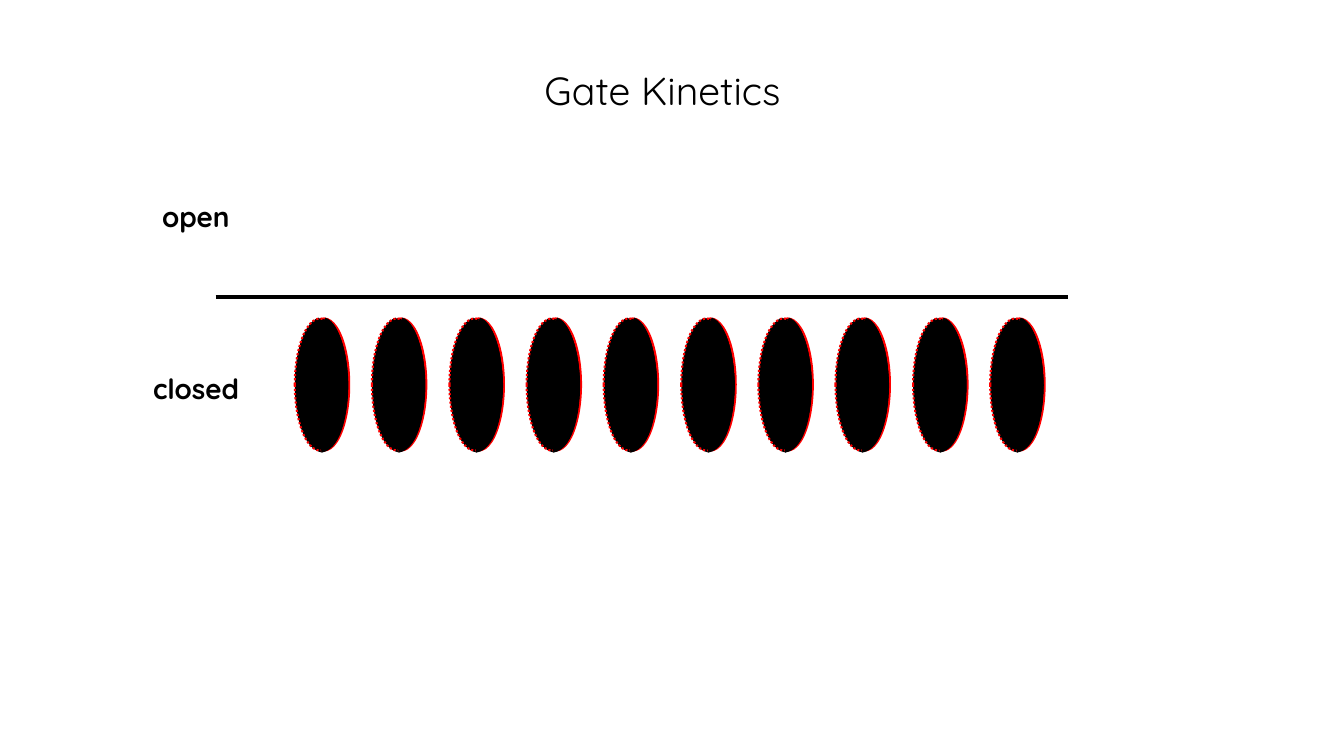
import pptx
import pptx.util
import pptx.dml.color
import pptx.enum.dml
import pptx.enum.shapes
import pptx.enum.text
import pptx.oxml.ns
import lxml.etree

PX = 4572
COLORS = {"ink": "000000", "rim": "FF0000", "paper": "FFFFFF"}
GATE_COUNT = 10
GATE_SPAN = 1380
THRESHOLD_Y = 589

presentation = pptx.Presentation()
presentation.slide_width = 2667 * PX
presentation.slide_height = 1500 * PX
slide = presentation.slides.add_slide(presentation.slide_layouts[5])


def rgb(name):
    return pptx.dml.color.RGBColor.from_string(COLORS[name])


def write_text(text, left, top, width, height, size=20, bold=True, holder=None):
    if holder is None:
        holder = slide.shapes.add_textbox(0, 0, 0, 0)
    holder.left, holder.top = left * PX, top * PX
    holder.width, holder.height = width * PX, height * PX
    frame = holder.text_frame
    frame.text = text
    frame.word_wrap = False
    frame.auto_size = pptx.enum.text.MSO_AUTO_SIZE.SHAPE_TO_FIT_TEXT
    frame.vertical_anchor = pptx.enum.text.MSO_ANCHOR.TOP
    paragraph = frame.paragraphs[0]
    paragraph.alignment = pptx.enum.text.PP_ALIGN.LEFT
    paragraph.line_spacing = pptx.util.Pt(28)
    paragraph.space_before = pptx.util.Pt(0)
    font = paragraph.runs[0].font
    font.name = "Quicksand"
    font.size = pptx.util.Pt(size)
    font.bold = bold
    font.color.rgb = rgb("ink")


slide.background.fill.solid()
slide.background.fill.fore_color.rgb = rgb("paper")

write_text("Gate Kinetics", 1060, 137, 548, 98, size=28, bold=False, holder=slide.shapes.title)
write_text("open", 302, 374, 186, 92)
write_text("closed", 284, 716, 222, 92)

for start, end in [(428, 868), (462, 2120)]:
    threshold = slide.shapes.add_connector(
        pptx.enum.shapes.MSO_CONNECTOR.STRAIGHT,
        start * PX, THRESHOLD_Y * PX, end * PX, THRESHOLD_Y * PX,
    )
    threshold.line.color.rgb = rgb("ink")
    threshold.line.width = pptx.util.Pt(3)
    lxml.etree.SubElement(threshold._element.spPr, pptx.oxml.ns.qn("a:effectLst"))

left_edge = [(50, 636), (22, 644), (8, 722), (8, 764), (8, 806), (18, 886), (56, 892)]
right_edge = [(108 - x, y) for x, y in left_edge]

for index in range(GATE_COUNT):
    gate_left = 585 + round(index * GATE_SPAN / (GATE_COUNT - 1))
    gate = slide.shapes.add_group_shape()
    for offset, dash, edge in [
        (8, pptx.enum.dml.MSO_LINE.SOLID, left_edge),
        (0, pptx.enum.dml.MSO_LINE.ROUND_DOT, right_edge),
    ]:
        oval = gate.shapes.add_shape(
            pptx.enum.shapes.MSO_SHAPE.OVAL,
            (gate_left + offset) * PX, 632 * PX, 100 * PX, 262 * PX,
        )
        oval.shadow.inherit = False
        oval.fill.solid()
        oval.fill.fore_color.rgb = rgb("ink")
        oval.line.color.rgb = rgb("rim")
        oval.line.width = pptx.util.Pt(1.5)
        oval.line.dash_style = dash

        points = [((gate_left + x) * PX, y * PX) for x, y in edge]
        builder = gate.shapes.build_freeform(*points[0])
        builder.add_line_segments(points[1:], close=False)
        rim_cover = builder.convert_to_shape()
        segments = list(rim_cover._element.iter(pptx.oxml.ns.qn("a:lnTo")))
        outline = segments[0].getparent()
        for first in range(0, len(segments), 3):
            curve = lxml.etree.SubElement(outline, pptx.oxml.ns.qn("a:cubicBezTo"))
            for segment in segments[first:first + 3]:
                curve.append(segment[0])
                outline.remove(segment)
        rim_cover.shadow.inherit = False
        rim_cover.fill.background()
        rim_cover.line.color.rgb = rgb("ink")
        rim_cover.line.width = pptx.util.Pt(4.5)

presentation.save("out.pptx")
